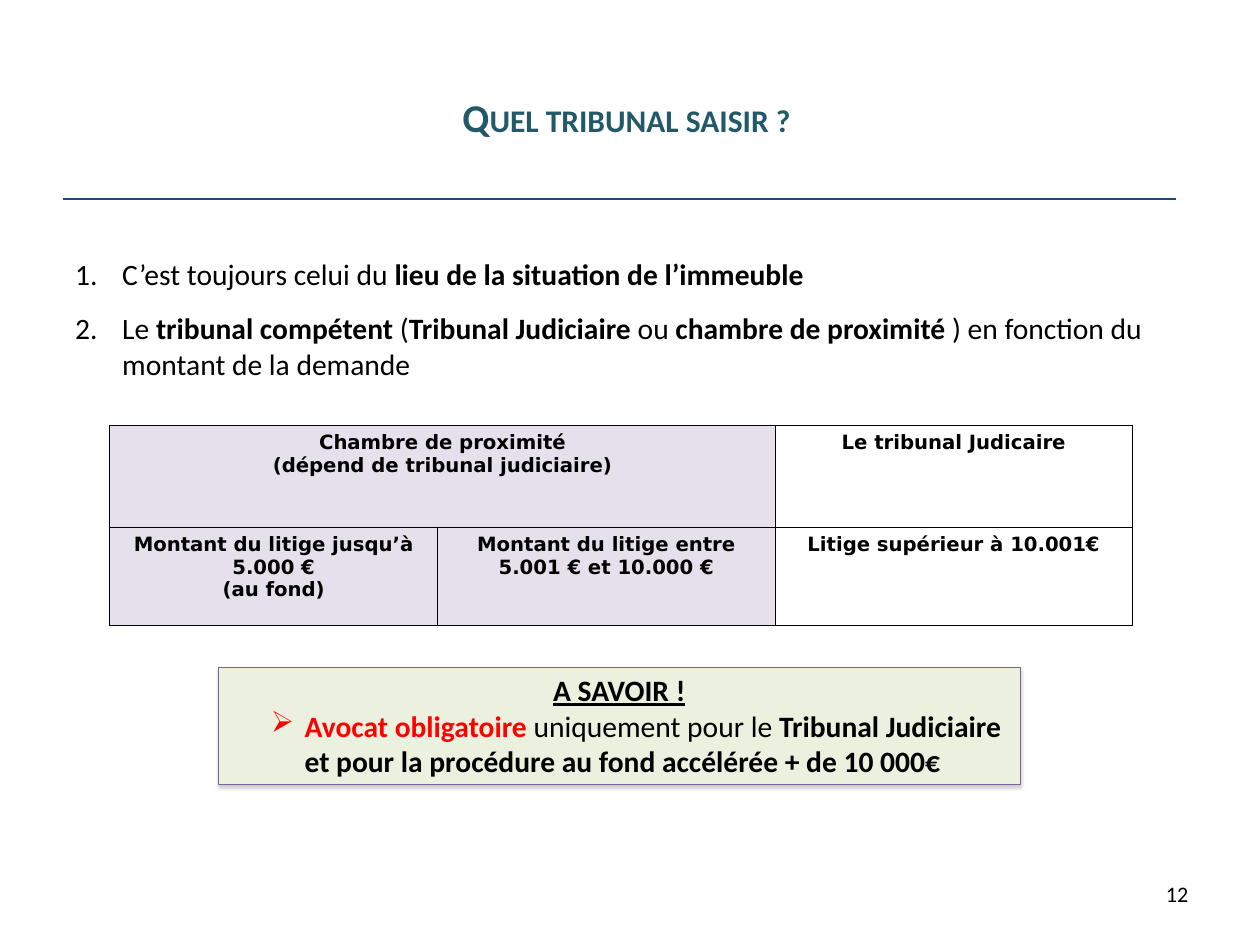
"""Build the slide on which court to apply to, placed by percentages of the slide."""
import pptx
import pptx.dml.color
import pptx.enum.shapes
import pptx.enum.text
import pptx.oxml.ns
import pptx.util
from lxml import etree

COLOURS = {
    "white": "FFFFFF", "black": "000000", "red": "FF0000", "teal": "215968",
    "rule": "1F497D", "lilac": "E6E0EC", "green": "EBF1DE", "violet": "7D60A0",
    "shadow": "808080",
}
ALIGN = pptx.enum.text.PP_ALIGN
qn = pptx.oxml.ns.qn


def colour(name):
    return pptx.dml.color.RGBColor.from_string(COLOURS[name])


def child(parent, tag, **attributes):
    return etree.SubElement(parent, qn(tag), {key: str(value) for key, value in attributes.items()})


class Sheet:
    """Hold the text style and the current slide."""

    def __init__(self, deck):
        self.font = "Calibri"
        self.size = 24
        self.deck = deck
        self.slide = deck.slides.add_slide(deck.slide_layouts[1])

    def across(self, share):
        return round(self.deck.slide_width * share / 100)

    def down(self, share):
        return round(self.deck.slide_height * share / 100)

    def frame(self, left, top, width, height):
        return self.across(left), self.down(top), self.across(width), self.down(height)

    def add_spans(self, para, spans, align=ALIGN.LEFT, font=None, size=None):
        para.alignment = align
        for text, *marks in spans:
            span = para.add_run()
            span.text = text
            span.font.name = font or self.font
            span.font.size = pptx.util.Pt(size or self.size)
            span.font.bold = "bold" in marks
            span.font.underline = "underline" in marks
            span.font.color.rgb = colour(next((mark for mark in marks if mark in COLOURS), "black"))
            if "small caps" in marks:
                span._r.get_or_add_rPr().set("cap", "small")

    def bullet(self, para, margin, hanging, tag, **attributes):
        properties = para._p.get_or_add_pPr()
        properties.set("marL", str(pptx.util.Inches(margin)))
        properties.set("indent", str(-pptx.util.Inches(hanging)))
        child(properties, tag, **attributes)

    def settle(self, placeholder, area):
        placeholder.left, placeholder.top, placeholder.width, placeholder.height = self.frame(*area)
        placeholder.text_frame.auto_size = pptx.enum.text.MSO_AUTO_SIZE.NONE
        return placeholder.text_frame

    def title(self, area, text):
        box = self.settle(self.slide.shapes.title, area)
        box.vertical_anchor = pptx.enum.text.MSO_ANCHOR.MIDDLE
        self.add_spans(box.paragraphs[0], [(text, "bold", "small caps", "teal")], ALIGN.CENTER, size=32)

    def numbered_list(self, area, items):
        box = self.settle(self.slide.placeholders[1], area)
        for index, spans in enumerate(items):
            para = box.add_paragraph() if index else box.paragraphs[0]
            self.bullet(para, 0.53, 0.53, "a:buAutoNum", type="arabicPeriod")
            para.space_before = pptx.util.Pt(15.5 if index else 0)
            self.add_spans(para, spans)

    def rule(self, left, right, top):
        line = self.slide.shapes.add_connector(
            pptx.enum.shapes.MSO_CONNECTOR.STRAIGHT,
            self.across(left), self.down(top), self.across(right), self.down(top))
        line.line.color.rgb = colour("rule")
        line.line.width = pptx.util.Pt(1.5)
        child(line._element.spPr, "a:effectLst")

    def table(self, left, top, columns, rows, cells, shaded):
        area = self.frame(left, top, sum(columns), sum(rows))
        grid = self.slide.shapes.add_table(len(rows), len(columns), *area).table
        grid.first_row = grid.horz_banding = False
        for column, width in zip(grid.columns, columns):
            column.width = self.across(width)
        for row, height in zip(grid.rows, rows):
            row.height = self.down(height)
        grid.cell(0, 0).merge(grid.cell(0, 1))
        for row, texts in enumerate(cells):
            for column, lines in enumerate(texts):
                self.cell(grid.cell(row, column), lines, "lilac" if column < shaded else "white")

    def cell(self, cell, lines, fill):
        cell.margin_left = cell.margin_right = pptx.util.Inches(0.14)
        cell.margin_top = cell.margin_bottom = pptx.util.Inches(0.07)
        for side in "LRTB":
            border = child(cell._tc.get_or_add_tcPr(), f"a:ln{side}", w=pptx.util.Pt(1))
            child(child(border, "a:solidFill"), "a:srgbClr", val=COLOURS["black"])
        cell.fill.solid()
        cell.fill.fore_color.rgb = colour(fill)
        for index, line in enumerate(lines):
            para = cell.text_frame.add_paragraph() if index else cell.text_frame.paragraphs[0]
            self.add_spans(para, [(line, "bold")], ALIGN.CENTER, "DejaVu Sans", 16)

    def callout(self, area, heading, spans):
        panel = self.slide.shapes.add_shape(
            pptx.enum.shapes.MSO_SHAPE.RECTANGLE, *self.frame(*area))
        panel.fill.solid()
        panel.fill.fore_color.rgb = colour("green")
        panel.line.color.rgb = colour("violet")
        panel.line.width = pptx.util.Pt(0.75)
        panel.shadow.inherit = False
        shade = child(panel._element.spPr.find(qn("a:effectLst")), "a:outerShdw",
                      blurRad=pptx.util.Pt(3.1), dist=pptx.util.Pt(1.6), dir=5400000, rotWithShape=0)
        child(child(shade, "a:srgbClr", val=COLOURS["shadow"]), "a:alpha", val=38000)
        box = panel.text_frame
        box.word_wrap = True
        box.vertical_anchor = pptx.enum.text.MSO_ANCHOR.TOP
        self.add_spans(box.paragraphs[0], [(heading, "bold", "underline")], ALIGN.CENTER)
        para = box.add_paragraph()
        self.bullet(para, 0.88, 0.38, "a:buChar", char="➢")
        self.add_spans(para, spans)

    def page_number(self, area, number):
        box = self.slide.shapes.add_textbox(*self.frame(*area)).text_frame
        box.word_wrap = True
        self.add_spans(box.paragraphs[0], [(number,)], ALIGN.RIGHT, size=18)


def main():
    deck = pptx.Presentation()
    deck.slide_width = pptx.util.Inches(14.22)
    deck.slide_height = pptx.util.Inches(10.67)
    sheet = Sheet(deck)
    sheet.rule(5, 93.3, 21.1)
    sheet.title((5, 4, 90, 16.7), "Quel tribunal saisir ? ")
    sheet.numbered_list((5.27, 26.6, 91.1, 20.5), [
        [("C’est toujours celui du ",), ("lieu de la situation de l’immeuble", "bold")],
        [("Le ",), ("tribunal compétent ", "bold"), ("(",), ("Tribunal Judiciaire ", "bold"),
         ("ou ",), ("chambre de proximité", "bold"),
         (" ) en fonction du montant de la demande",)],
    ])
    sheet.table(8.72, 45, (26, 26.8, 28.35), (10.78, 10.4), [
        [["Chambre de proximité", "(dépend de tribunal judiciaire)"], [], ["Le tribunal Judicaire"]],
        [["Montant du litige jusqu’à 5.000 €", "(au fond)"],
         ["Montant du litige entre 5.001 € et 10.000 €"], ["Litige supérieur à 10.001€"]],
    ], shaded=2)
    sheet.callout((17.3, 70.67, 63.7, 12.3), "A SAVOIR !", [
        ("Avocat obligatoire ", "bold", "red"), ("uniquement pour le ",),
        ("Tribunal Judiciaire et pour la procédure au fond accélérée + de 10 000€", "bold"),
    ])
    sheet.page_number((71.66, 92.7, 23.35, 5.3), "12")
    deck.save("out.pptx")


if __name__ == "__main__":
    main()
